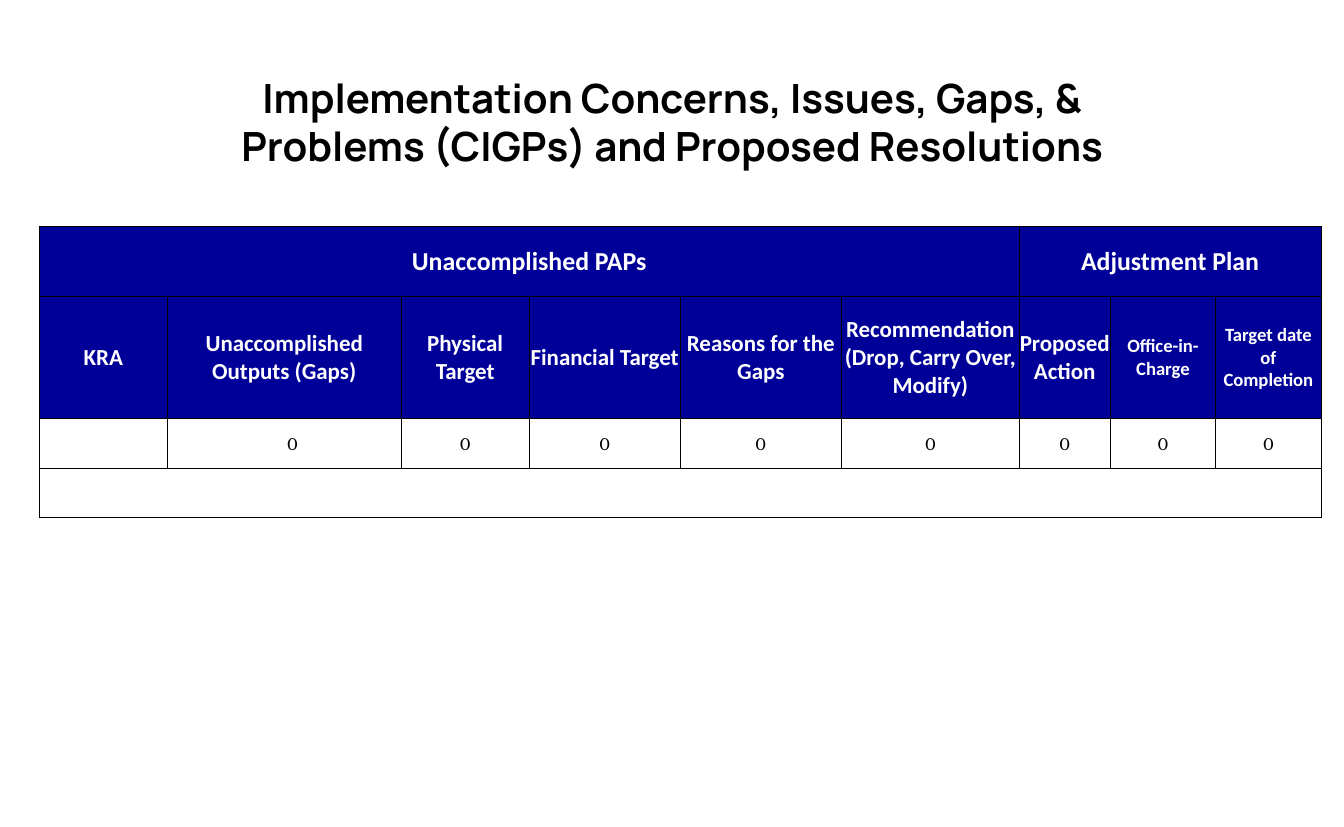
from lxml.etree import SubElement
from pptx import Presentation
from pptx.dml.color import RGBColor
from pptx.enum.text import MSO_ANCHOR, PP_ALIGN
from pptx.oxml.ns import qn
from pptx.util import Inches, Pt


def style_text(frame, font_name, size, color, bold):
    paragraph = frame.paragraphs[0]
    paragraph.alignment = PP_ALIGN.CENTER
    font = paragraph.font
    font.name, font.size, font.bold = font_name, Pt(size), bold
    font.color.rgb = RGBColor.from_string(color)


def add_borders(cell, color, width):
    properties = cell._tc.get_or_add_tcPr()
    for side in ("a:lnL", "a:lnR", "a:lnT", "a:lnB"):
        line = SubElement(properties, qn(side), w=str(Pt(width)))
        fill = SubElement(line, qn("a:solidFill"))
        SubElement(fill, qn("a:srgbClr"), val=color)


prs = Presentation()
prs.slide_width, prs.slide_height = Inches(13), Inches(8)
slide = prs.slides.add_slide(prs.slide_layouts[6])

# Title
title = slide.shapes.add_textbox(Inches(1.95), Inches(0.71), Inches(9.1), Inches(0.94)).text_frame
title.word_wrap = True
title.margin_left = title.margin_right = title.margin_top = title.margin_bottom = 0
title.text = "Implementation Concerns, Issues, Gaps, & Problems (CIGPs) and Proposed Resolutions"
style_text(title, "Manrope", 28, "000000", True)

# Table grid
column_widths = [1.24, 2.26, 1.24, 1.46, 1.56, 1.72, 0.88, 1.02, 1.02]
row_heights = [0.68, 1.18, 0.48, 0.48]
plan = slide.shapes.add_table(
    len(row_heights), len(column_widths),
    Inches(0.38), Inches(2.19), Inches(sum(column_widths)), Inches(sum(row_heights)),
).table
plan.first_row = plan.horz_banding = False
for column, width in zip(plan.columns, column_widths):
    column.width = Inches(width)
for row, height in zip(plan.rows, row_heights):
    row.height = Inches(height)

# Merged cells: row, first column, last column
for row, first, last in [(0, 0, 5), (0, 6, 8), (3, 0, 8)]:
    plan.cell(row, first).merge(plan.cell(row, last))

# Cell contents
contents = [
    ["Unaccomplished PAPs", "", "", "", "", "", "Adjustment Plan", "", ""],
    ["KRA", "Unaccomplished Outputs (Gaps)", "Physical Target", "Financial Target",
     "Reasons for the Gaps", "Recommendation (Drop, Carry Over, Modify)",
     "Proposed Action", "Office-in-Charge", "Target date of Completion"],
    [""] + ["0"] * 8,
    [""] * 9,
]
for r, texts in enumerate(contents):
    for c, text in enumerate(texts):
        cell = plan.cell(r, c)
        add_borders(cell, "000000", 0.75)
        is_header = r < 2
        if is_header:
            cell.fill.solid()
            cell.fill.fore_color.rgb = RGBColor.from_string("000099")
        else:
            cell.fill.background()
        if not text:
            continue
        cell.text = text
        cell.vertical_anchor = MSO_ANCHOR.MIDDLE
        cell.margin_left = cell.margin_right = cell.margin_top = cell.margin_bottom = 0
        if is_header:
            size = 18 if r == 0 else 16 if c < 7 else 13
            style_text(cell.text_frame, "Calibri", size, "FFFFFF", True)
        else:
            style_text(cell.text_frame, "TeX Gyre Bonum", 12, "000000", False)

# The first count sits slightly right of centre
plan.cell(2, 1).margin_left = Inches(0.16)

prs.save("out.pptx")
